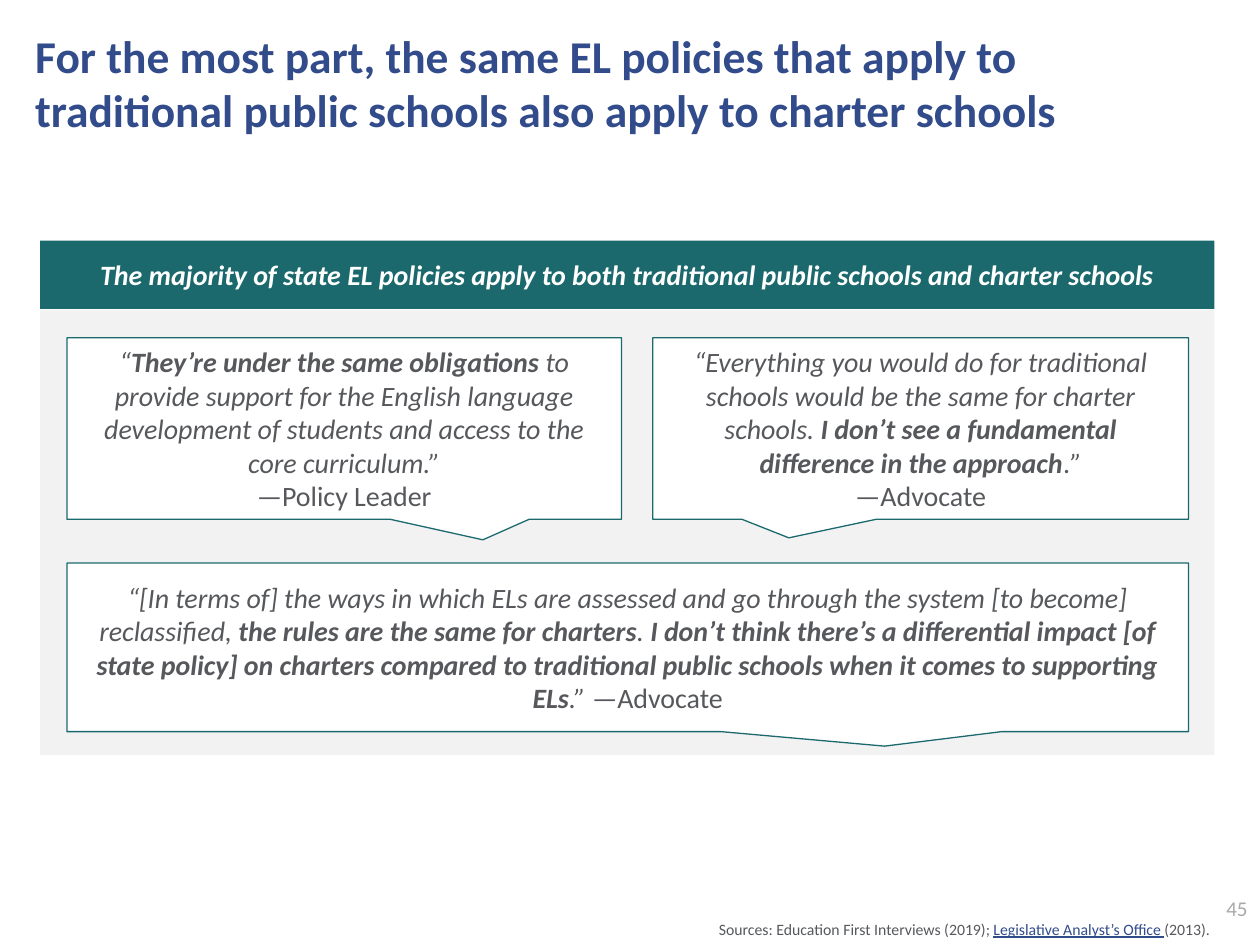
import pptx
import pptx.util
import pptx.dml.color
import pptx.enum.shapes
import pptx.enum.text

Cm = pptx.util.Cm
SHAPE = pptx.enum.shapes.MSO_SHAPE
ALIGN = pptx.enum.text.PP_ALIGN
ANCHOR = pptx.enum.text.MSO_ANCHOR
COLORS = {
    "navy": "324B8B",
    "teal": "1B696D",
    "panel": "F2F2F2",
    "white": "FFFFFF",
    "body": "56585C",
    "number": "A9A9A9",
}


def rgb(name):
    return pptx.dml.color.RGBColor.from_string(COLORS[name])


def write(shape, paragraphs, size, color, align, anchor=ANCHOR.MIDDLE, inset=None):
    frame = shape.text_frame
    frame.word_wrap = True
    frame.vertical_anchor = anchor
    if inset is not None:
        frame.margin_left = frame.margin_right = inset
        frame.margin_top = frame.margin_bottom = inset
    for index, pieces in enumerate(paragraphs):
        paragraph = frame.add_paragraph() if index else frame.paragraphs[0]
        paragraph.alignment = align
        for words, style in pieces:
            run = paragraph.add_run()
            run.text = words
            run.font.name = "Calibri"
            run.font.size = pptx.util.Pt(size)
            run.font.bold = "b" in style
            run.font.italic = "i" in style
            run.font.underline = "u" in style
            run.font.color.rgb = rgb("navy" if "u" in style else color)


deck = pptx.Presentation()
deck.slide_width, deck.slide_height = Cm(25.4), Cm(19.05)
slide = deck.slides.add_slide(deck.slide_layouts[6])
shapes = slide.shapes

panel = shapes.add_shape(SHAPE.RECTANGLE, Cm(0.81), Cm(6.25), Cm(23.67), Cm(8.97))
banner = shapes.add_shape(SHAPE.RECTANGLE, Cm(0.81), Cm(4.85), Cm(23.67), Cm(1.38))
for block, fill in ((panel, "panel"), (banner, "teal")):
    block.shadow.inherit = False
    block.fill.solid()
    block.fill.fore_color.rgb = rgb(fill)
    block.line.fill.background()
write(banner, [[("The majority of state EL policies apply to both traditional public schools and charter schools", "bi")]],
      16, "white", ALIGN.CENTER)

title = shapes.add_textbox(Cm(0.71), Cm(0.56), Cm(22.61), Cm(2.95))
write(title, [[("For the most part, the same EL policies that apply to traditional public schools also apply to charter schools", "b")]],
      26, "navy", ALIGN.LEFT, ANCHOR.TOP, 0)

quotes = [
    ((1.35, 6.81, 11.18, 3.66), (0.25, 0.613), [
        [("“", "i"),
         ("They’re under the same obligations ", "bi"),
         ("to provide support for the English language development of students and access to the core curriculum.”", "i")],
        [("—Policy Leader", "")],
    ]),
    ((13.16, 6.81, 10.8, 3.66), (-0.246, 0.602), [
        [("“Everything you would do for traditional schools would be the same for charter schools. ", "i"),
         ("I don’t see a fundamental difference in the approach", "bi"),
         (".", ""),
         ("”", "i")],
        [("—Advocate", "")],
    ]),
    ((1.35, 11.35, 22.61, 3.4), (0.229, 0.586), [
        [("“[In terms of] the ways in which ELs are assessed and go through the system [to become] reclassified, ", "i"),
         ("the rules are the same for charters", "bi"),
         (". ", "i"),
         ("I don’t think there’s a differential impact [of state policy] on charters compared to traditional public schools when it comes to supporting ELs", "bi"),
         (".” ", "i"),
         ("—Advocate", "")],
    ]),
]
for bounds, pointer, words in quotes:
    quote = shapes.add_shape(SHAPE.RECTANGULAR_CALLOUT, *(Cm(length) for length in bounds))
    quote.adjustments[0], quote.adjustments[1] = pointer
    quote.shadow.inherit = False
    quote.fill.solid()
    quote.fill.fore_color.rgb = rgb("white")
    quote.line.color.rgb = rgb("teal")
    quote.line.width = pptx.util.Pt(0.75)
    write(quote, words, 16, "body", ALIGN.CENTER)

page_number = shapes.add_textbox(Cm(23.7), Cm(17.93), Cm(1.7), Cm(0.76))
write(page_number, [[("45", "")]], 12, "number", ALIGN.RIGHT)

sources = shapes.add_textbox(Cm(5.21), Cm(18.24), Cm(19.18), Cm(0.97))
write(sources, [[("Sources: Education First Interviews (2019); ", ""),
                 ("Legislative Analyst’s Office ", "u"),
                 ("(2013).", "")]],
      9, "body", ALIGN.RIGHT, inset=0)

deck.save("out.pptx")
